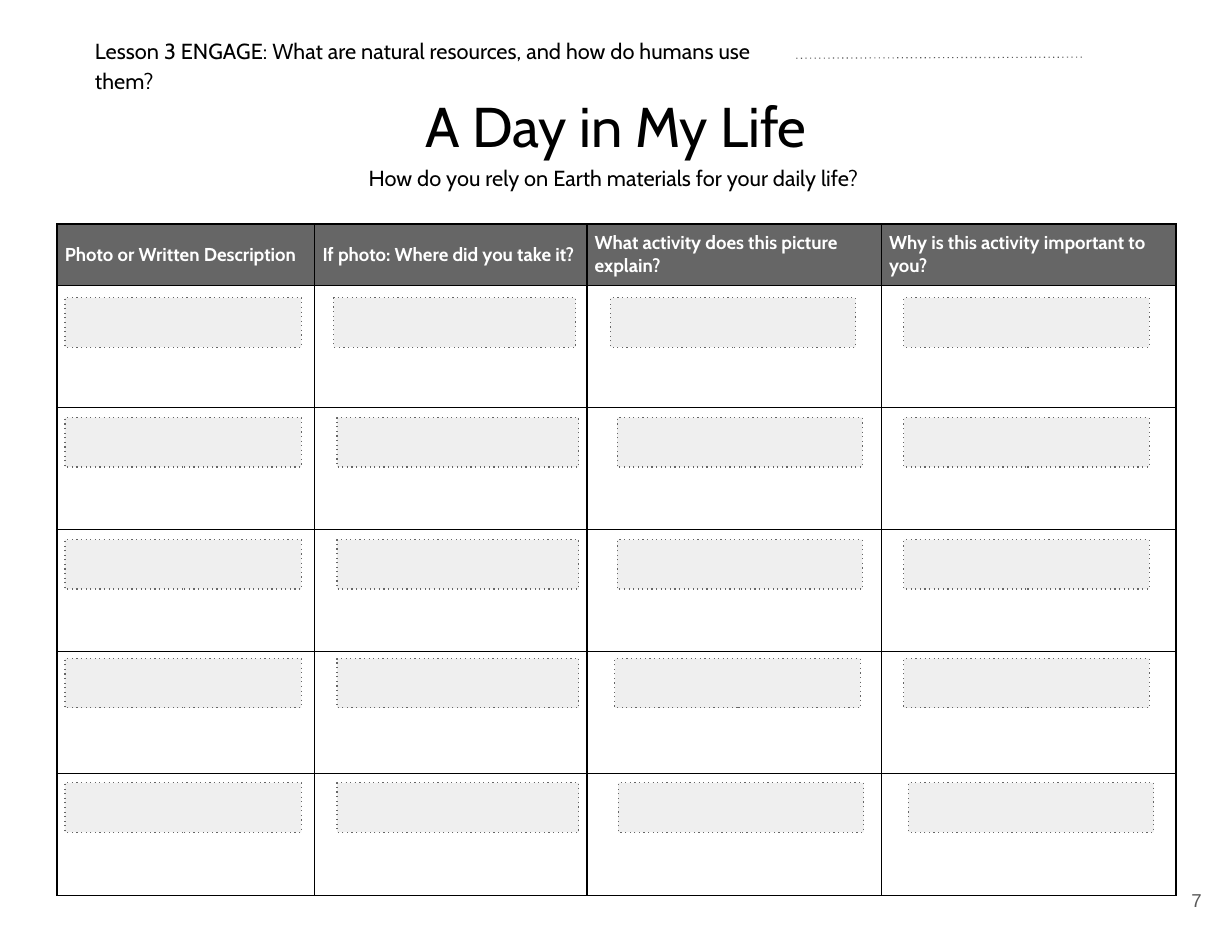
from lxml.etree import SubElement
from pptx import Presentation
from pptx.dml.color import RGBColor
from pptx.enum.shapes import MSO_CONNECTOR, MSO_SHAPE
from pptx.enum.text import MSO_ANCHOR, PP_ALIGN
from pptx.oxml.ns import qn
from pptx.util import Inches, Pt

LESSON = "Lesson 3 ENGAGE: What are natural resources, and how do humans use them?"
TITLE = "A Day in My Life"
QUESTION = "How do you rely on Earth materials for your daily life? "
PAGE_NUMBER = "7"
HEADERS = [
    "Photo or Written Description",
    "If photo: Where did you take it?",
    "What activity does this picture explain?",
    "Why is this activity important to you?",
]
COLUMN_WIDTHS = [2.3, 2.43, 2.63, 2.63]
HEADER_HEIGHT, ROW_HEIGHT = 0.53, 1.09
ANSWER_TOPS = [2.66, 3.73, 4.82, 5.88, 6.99]
ANSWER_HEIGHT = 0.44
ANSWER_COLUMNS = [
    (2.11, [0.58] * 5),
    (2.16, [2.98] + [3.01] * 4),
    (2.19, [5.45, 5.51, 5.51, 5.49, 5.52]),
    (2.19, [8.07] * 4 + [8.11]),
]


def color(value):
    return RGBColor.from_string(value)


def style_text(para, size, hue, font="Cabin", bold=False):
    for span in para.runs:
        span.font.name = font
        span.font.size = Pt(size)
        span.font.bold = bold
        span.font.color.rgb = color(hue)


def add_text(page, place, text, size, align=PP_ALIGN.LEFT, anchor=MSO_ANCHOR.TOP,
             inset=0.1, hue="000000", font="Cabin", spacing=None, after=0):
    frame = page.shapes.add_textbox(*map(Inches, place)).text_frame
    frame.word_wrap = True
    frame.vertical_anchor = anchor
    frame.margin_left = frame.margin_right = Inches(inset)
    frame.margin_top = frame.margin_bottom = Inches(inset)
    frame.text = text
    para = frame.paragraphs[0]
    para.alignment = align
    para.line_spacing = spacing
    para.space_after = Pt(after)
    style_text(para, size, hue, font)


def style_dotted(shape, hue):
    shape.line.color.rgb = color(hue)
    shape.line.width = Pt(0.75)
    SubElement(shape.get_or_add_ln(), qn("a:prstDash"), val="dot")


def add_borders(cell):
    properties = cell._tc.get_or_add_tcPr()
    for index, side in enumerate(("lnL", "lnR", "lnT", "lnB")):
        border = properties.makeelement(qn(f"a:{side}"), {"w": str(Pt(1))})
        fill = SubElement(border, qn("a:solidFill"))
        SubElement(fill, qn("a:srgbClr"), val="000000")
        properties.insert(index, border)


def add_activity_table(page):
    row_heights = [HEADER_HEIGHT] + [ROW_HEIGHT] * len(ANSWER_TOPS)
    frame = page.shapes.add_table(
        len(row_heights), len(HEADERS), Inches(0.51), Inches(2),
        Inches(sum(COLUMN_WIDTHS)), Inches(sum(row_heights)))
    table = frame.table
    table.first_row = table.horz_banding = False
    for column, width in zip(table.columns, COLUMN_WIDTHS):
        column.width = Inches(width)
    for row, height in zip(table.rows, row_heights):
        row.height = Inches(height)
    for cell in table.iter_cells():
        cell.fill.background()
        add_borders(cell)
    for cell, header in zip(table.rows[0].cells, HEADERS):
        cell.fill.solid()
        cell.fill.fore_color.rgb = color("666666")
        cell.margin_left = cell.margin_right = Inches(0.07)
        cell.margin_top = cell.margin_bottom = Inches(0.07)
        cell.vertical_anchor = MSO_ANCHOR.MIDDLE
        cell.text = header
        style_text(cell.text_frame.paragraphs[0], 12, "FFFFFF", bold=True)


def add_answer_boxes(page):
    for width, lefts in ANSWER_COLUMNS:
        for left, top in zip(lefts, ANSWER_TOPS):
            box = page.shapes.add_shape(
                MSO_SHAPE.RECTANGLE, Inches(left), Inches(top),
                Inches(width), Inches(ANSWER_HEIGHT))
            box.shadow.inherit = False
            box.fill.solid()
            box.fill.fore_color.rgb = color("EFEFEF")
            style_dotted(box, "666666")


def main():
    deck = Presentation()
    deck.slide_width, deck.slide_height = Inches(11), Inches(8.5)
    page = deck.slides.add_slide(deck.slide_layouts[6])

    add_activity_table(page)
    add_text(page, (0.75, 0.35, 6.5, 0.44), LESSON, 14,
             anchor=MSO_ANCHOR.MIDDLE, spacing=1.15, after=10)
    add_text(page, (0, 0.63, 11, 0.88), TITLE, 36,
             align=PP_ALIGN.CENTER, spacing=1.15, after=10)
    add_text(page, (0, 1.37, 11, 0.44), QUESTION, 14, align=PP_ALIGN.CENTER)

    name_line = page.shapes.add_connector(
        MSO_CONNECTOR.STRAIGHT, Inches(7.11), Inches(0.52), Inches(9.68), Inches(0.51))
    style_dotted(name_line, "595959")
    SubElement(name_line._element.spPr, qn("a:effectLst"))

    add_text(page, (10.19, 7.71, 0.66, 0.65), PAGE_NUMBER, 12, align=PP_ALIGN.RIGHT,
             anchor=MSO_ANCHOR.MIDDLE, inset=0.12, hue="595959", font="Arial")
    add_answer_boxes(page)
    deck.save("out.pptx")


if __name__ == "__main__":
    main()
